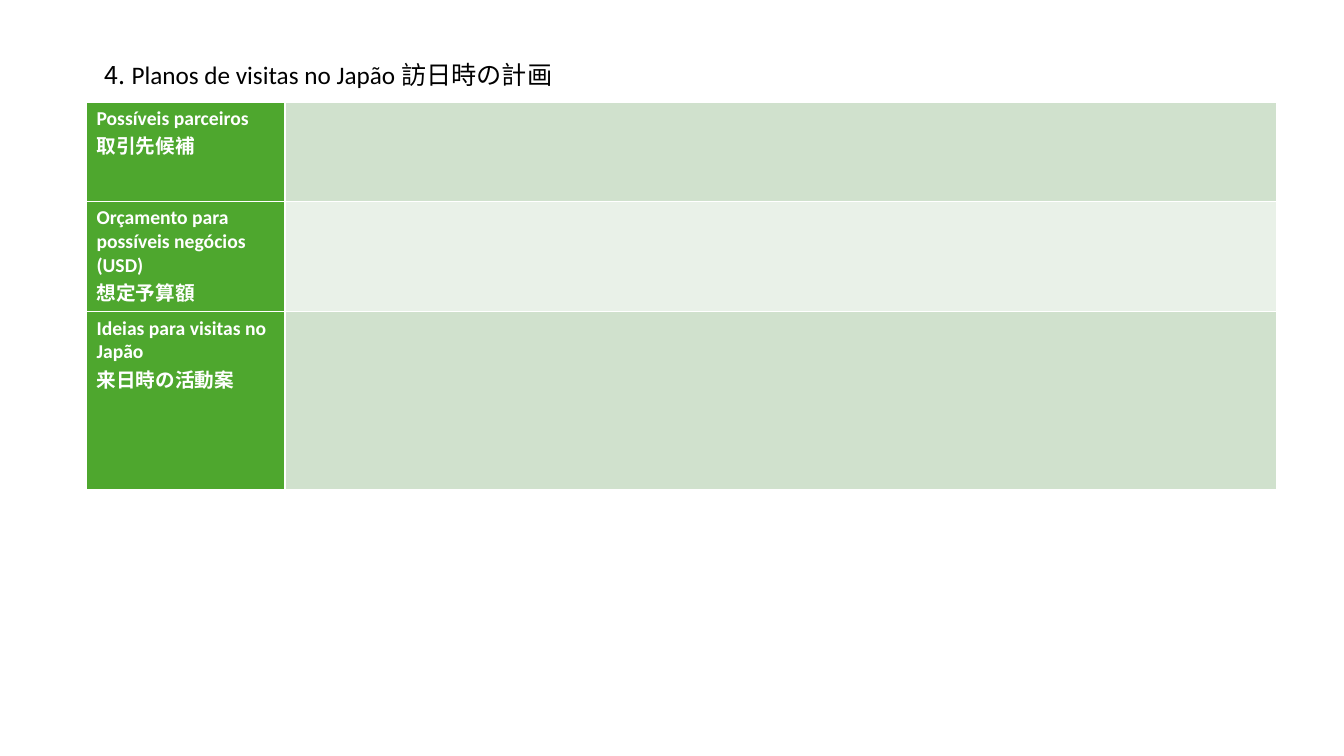
from lxml.etree import SubElement
from pptx import Presentation
from pptx.dml.color import RGBColor
from pptx.enum.text import MSO_ANCHOR, MSO_AUTO_SIZE, PP_ALIGN
from pptx.oxml.ns import qn
from pptx.util import Cm, Pt

COLOURS = {
    "text": "000000",
    "white": "FFFFFF",
    "label": "4EA72E",
    "band_dark": "D0E1CD",
    "band_light": "E9F1E8",
}
LATIN = "Calibri"
JAPANESE = "Noto Sans CJK JP"

TITLE = [("4. ", JAPANESE), ("Planos de visitas no Japão ", LATIN), ("訪日時の計画", JAPANESE)]
COLUMN_WIDTHS = [5, 25]
ROWS = [
    ("Possíveis parceiros", "取引先候補", 2.5),
    ("Orçamento para possíveis negócios (USD)", "想定予算額", 2.7),
    ("Ideias para visitas no Japão", "来日時の活動案", 4.5),
]


def colour(name):
    return RGBColor.from_string(COLOURS[name])


class PlanPage:
    def __init__(self, deck):
        self.page = deck.slides.add_slide(deck.slide_layouts[5])

    def style(self, span, size, colour_name, latin=LATIN, bold=False):
        """Format a run, with a separate font for its Japanese characters."""
        font = span.font
        font.size = Pt(size)
        font.bold = bold
        font.color.rgb = colour(colour_name)
        font.name = latin
        east_asian = SubElement(span._r.get_or_add_rPr(), qn("a:ea"))
        east_asian.set("typeface", JAPANESE)

    def title(self, spans, left, top, width, height):
        box = self.page.shapes.title
        box.left, box.top, box.width, box.height = map(Cm, (left, top, width, height))
        frame = box.text_frame
        frame.word_wrap = True
        frame.auto_size = MSO_AUTO_SIZE.NONE
        frame.vertical_anchor = MSO_ANCHOR.TOP
        para = frame.paragraphs[0]
        para.alignment = PP_ALIGN.LEFT
        para.line_spacing = 1.0
        for text, font_name in spans:
            span = para.add_run()
            span.text = text
            self.style(span, 18, "text", font_name)

    def paint_cell(self, cell, fill_name):
        """Draw the white borders first, as the file format wants them before the fill."""
        properties = cell._tc.get_or_add_tcPr()
        for side in ("lnL", "lnR", "lnT", "lnB"):
            line = SubElement(properties, qn(f"a:{side}"), w=str(Pt(1)))
            fill = SubElement(line, qn("a:solidFill"))
            SubElement(fill, qn("a:srgbClr"), val=COLOURS["white"])
        cell.fill.solid()
        cell.fill.fore_color.rgb = colour(fill_name)

    def table(self, rows, widths, left, top):
        height = sum(row[-1] for row in rows)
        table = self.page.shapes.add_table(
            len(rows), len(widths), Cm(left), Cm(top), Cm(sum(widths)), Cm(height)
        ).table
        table.first_row = False
        table.first_col = True
        for column, width in zip(table.columns, widths):
            column.width = Cm(width)
        for index, (portuguese, japanese, row_height) in enumerate(rows):
            table.rows[index].height = Cm(row_height)
            label, answer = table.rows[index].cells
            self.paint_cell(label, "label")
            self.paint_cell(answer, "band_light" if index % 2 else "band_dark")
            label.text_frame.text = f"{portuguese}\n{japanese}"
            for para in label.text_frame.paragraphs:
                self.style(para.runs[0], 14, "white", bold=True)


def main():
    deck = Presentation()
    deck.slide_width, deck.slide_height = Cm(33.87), Cm(19.05)
    plan = PlanPage(deck)
    plan.table(ROWS, COLUMN_WIDTHS, left=2.18, top=2.57)
    plan.title(TITLE, left=2.39, top=1.37, width=19.2, height=1.02)
    deck.save("out.pptx")


if __name__ == "__main__":
    main()
